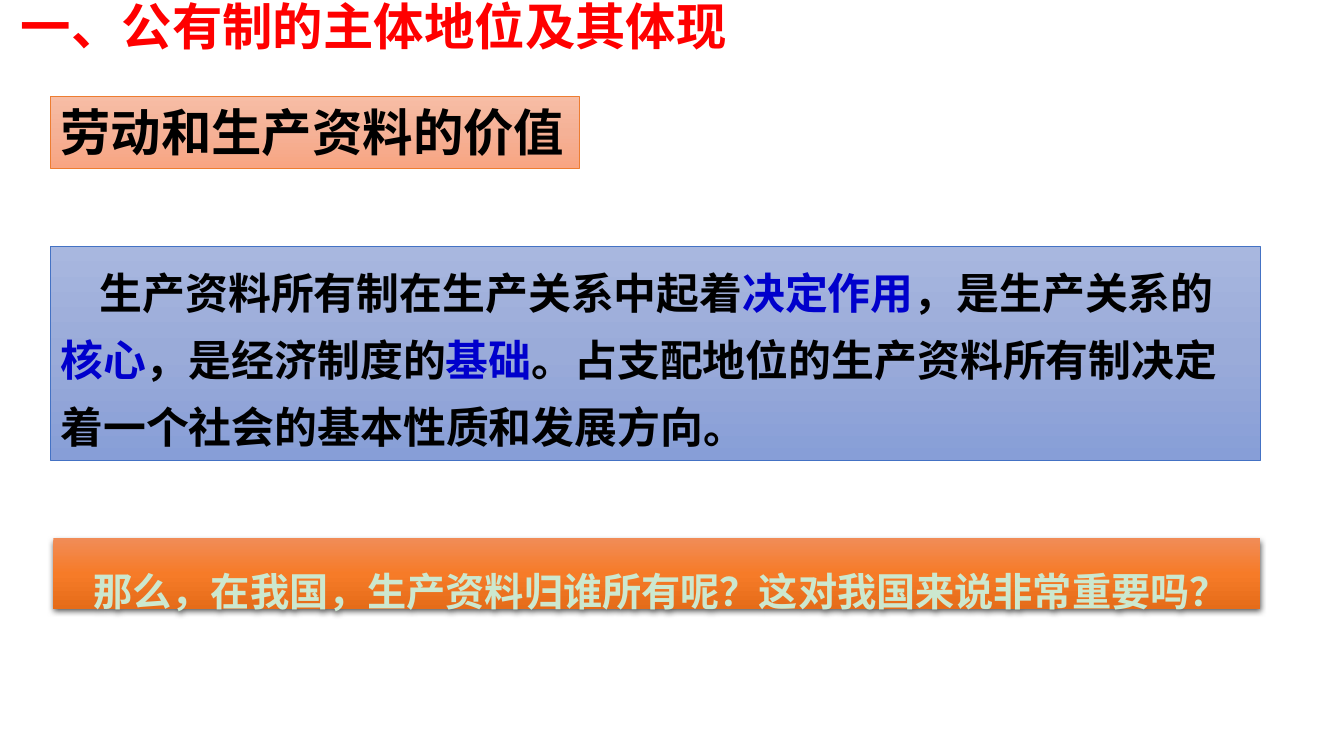
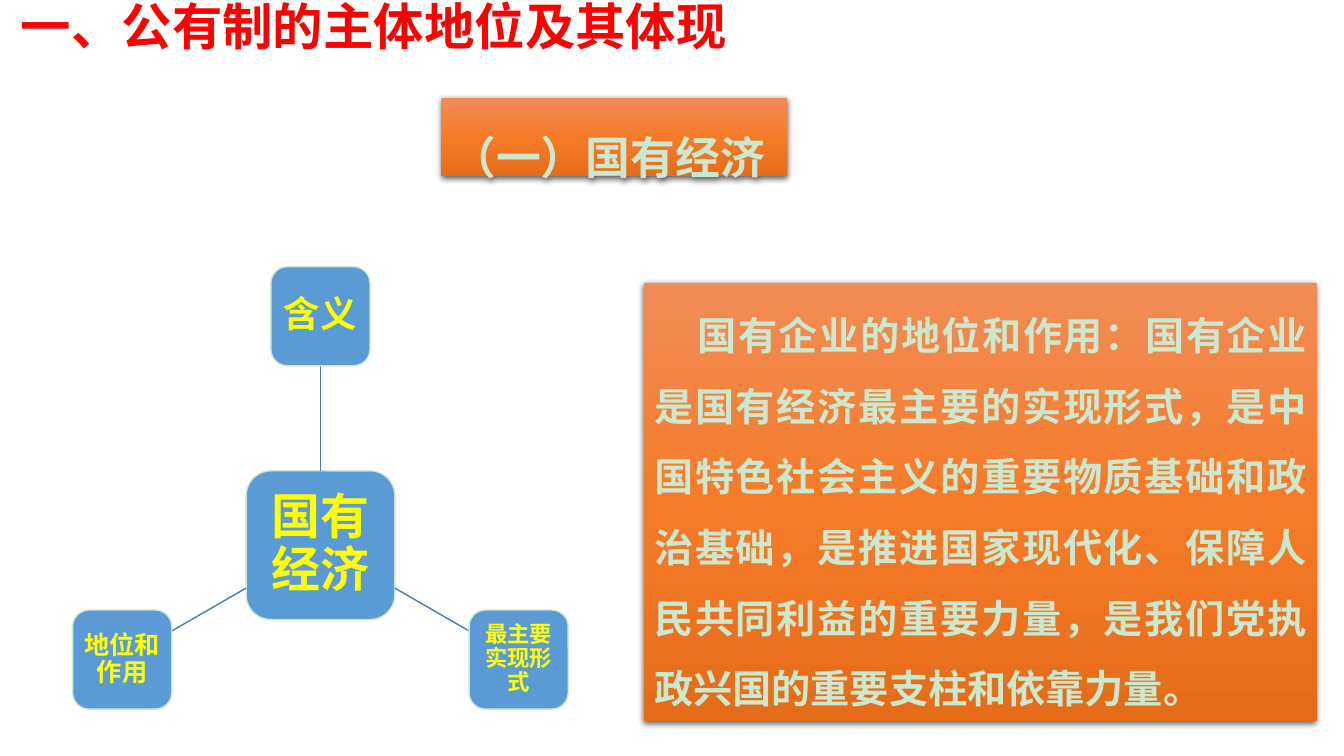
"""Build two slides on public ownership and the state-owned economy."""
from copy import deepcopy
from math import cos, radians, sin

from lxml.etree import SubElement
from pptx import Presentation
from pptx.dml.color import RGBColor
from pptx.enum.shapes import MSO_CONNECTOR, MSO_SHAPE
from pptx.enum.text import MSO_ANCHOR, MSO_AUTO_SIZE, PP_ALIGN
from pptx.oxml.ns import qn
from pptx.util import Inches, Pt

COLORS = {
    "title": "FF0000", "text": "000000", "accent": "0000CC", "pale": "CCE8CF",
    "node": "5B9BD5", "node_text": "FFFF00", "spoke": "497CAB",
    "peach_line": "ED7D31", "blue_line": "4472C4",
}
GRADIENTS = {
    "peach": ("F7BDA5", "F5B196", "F8A582"),
    "blue": ("A8B7DF", "9AABD9", "879ED7"),
    "orange": ("F18C57", "F67B28", "E56C19"),
}
COLOR = {name: RGBColor.from_string(value) for name, value in COLORS.items()}

deck = Presentation()
deck.slide_width, deck.slide_height = Inches(13.333), Inches(7.5)
CELL = deck.slide_height / 18


def grid(*cells):
    return [round(cell * CELL) for cell in cells]


def write(shape, text, size, color="text", font="Arial", align=PP_ALIGN.LEFT,
          anchor=MSO_ANCHOR.TOP, spacing=1.0, indent=0, inset=None, wrap=True):
    """Set the text of a shape; pieces between bars take the accent colour."""
    frame = shape.text_frame
    frame.auto_size = MSO_AUTO_SIZE.NONE
    frame.word_wrap = wrap
    frame.vertical_anchor = anchor
    margins = (0.1, 0.05, 0.1, 0.05) if inset is None else (inset,) * 4
    (frame.margin_left, frame.margin_top,
     frame.margin_right, frame.margin_bottom) = map(Inches, margins)
    paragraph = frame.paragraphs[0]
    paragraph.alignment = align
    paragraph.line_spacing = spacing
    paragraph.space_before = Pt(0)
    paragraph._p.get_or_add_pPr().set("indent", str(Inches(indent)))
    for index, piece in enumerate(text.split("|")):
        run = paragraph.add_run()
        run.text = piece
        run.font.size, run.font.name, run.font.bold = Pt(size), font, True
        run.font.color.rgb = COLOR["accent" if index % 2 else color]


HEADING = "一、公有制的主体地位及其体现"
PALE = dict(color="pale", align=PP_ALIGN.JUSTIFY, spacing=1.5)
SLIDES = [
    [
        ((1.2, 2.3, 12.6, 1.7), "peach", "劳动和生产资料的价值", dict(size=36, wrap=False)),
        ((1.2, 5.86, 28.8, 5.09), "blue",
         "生产资料所有制在生产关系中起着|决定作用|，是生产关系的|核心|，是经济制度的|基础|"
         "。占支配地位的生产资料所有制决定着一个社会的基本性质和发展方向。",
         dict(size=30.6, spacing=1.3, indent=0.39)),
        ((1.27, 12.82, 28.73, 1.68), "orange",
         "那么，在我国，生产资料归谁所有呢？这对我国来说非常重要吗？",
         dict(PALE, size=28, indent=0.3)),
    ],
    [
        ((10.51, 2.33, 8.23, 1.87), "orange", "（一）国有经济", dict(PALE, size=32)),
        ((15.34, 6.74, 16.01, 10.42), "orange",
         "国有企业的地位和作用：国有企业是国有经济最主要的实现形式，"
         "是中国特色社会主义的重要物质基础和政治基础，是推进国家现代化、"
         "保障人民共同利益的重要力量，是我们党执政兴国的重要支柱和依靠力量。",
         dict(PALE, size=28, indent=0.43)),
    ],
]

for panels in SLIDES:
    slide = deck.slides.add_slide(deck.slide_layouts[5])
    heading = slide.shapes.title
    heading.left, heading.top, heading.width, heading.height = grid(0.26, -0.24, 17.5, 1.7)
    write(heading, HEADING, size=36, color="title", wrap=False)

    for place, tone, words, style in panels:
        panel = slide.shapes.add_shape(MSO_SHAPE.RECTANGLE, *grid(*place))
        panel.shadow.inherit = False
        panel.fill.gradient()
        panel.fill.gradient_angle = 270
        stops = panel._element.spPr.find(".//" + qn("a:gsLst"))
        stops.insert(1, deepcopy(stops[0]))
        for stop, shade, position in zip(panel.fill.gradient_stops, GRADIENTS[tone], (0, 0.5, 1)):
            stop.color.rgb = RGBColor.from_string(shade)
            stop.position = position
        if tone == "orange":
            panel.line.fill.background()
            effects = panel._element.spPr.find(qn("a:effectLst"))
            shadow = SubElement(effects, qn("a:outerShdw"), blurRad=str(Pt(4.5)),
                                dist=str(Pt(1.5)), dir="5400000", rotWithShape="0")
            black = SubElement(shadow, qn("a:srgbClr"), val="000000")
            SubElement(black, qn("a:alpha"), val="63000")
        else:
            panel.line.color.rgb = COLOR[tone + "_line"]
            panel.line.width = Pt(0.5)
        write(panel, words, **style)

HUB_X, HUB_Y, RADIUS = 7.63, 12.98, 5.45
HUB_HALF, NODE_HALF = 1.77, 1.18
NODES = [
    ("国有经济", None, 35, 0.1),
    ("含义", -90, 26, 0.07),
    ("最主要实现形式", 30, 16, 0.04),
    ("地位和作用", 150, 18, 0.05),
]

for label, angle, size, inset in NODES:
    x, y, half = HUB_X, HUB_Y, HUB_HALF
    if angle is not None:
        across, down = cos(radians(angle)), sin(radians(angle))
        reach = max(abs(across), abs(down))
        x, y, half = HUB_X + RADIUS * across, HUB_Y + RADIUS * down, NODE_HALF
        start, end = HUB_HALF / reach, RADIUS - NODE_HALF / reach
        spoke = slide.shapes.add_connector(
            MSO_CONNECTOR.STRAIGHT,
            *grid(HUB_X + start * across, HUB_Y + start * down,
                  HUB_X + end * across, HUB_Y + end * down))
        spoke.line.color.rgb, spoke.line.width = COLOR["spoke"], Pt(1)
        SubElement(spoke._element.spPr, qn("a:effectLst"))
    node = slide.shapes.add_shape(
        MSO_SHAPE.ROUNDED_RECTANGLE, *grid(x - half, y - half, 2 * half, 2 * half))
    node.shadow.inherit = False
    node.fill.solid()
    node.fill.fore_color.rgb = COLOR["node"]
    node.line.color.rgb, node.line.width = COLOR["pale"], Pt(1)
    write(node, label, size, color="node_text", font="Calibri", align=PP_ALIGN.CENTER,
          anchor=MSO_ANCHOR.MIDDLE, spacing=0.9, inset=inset)

deck.save("out.pptx")
